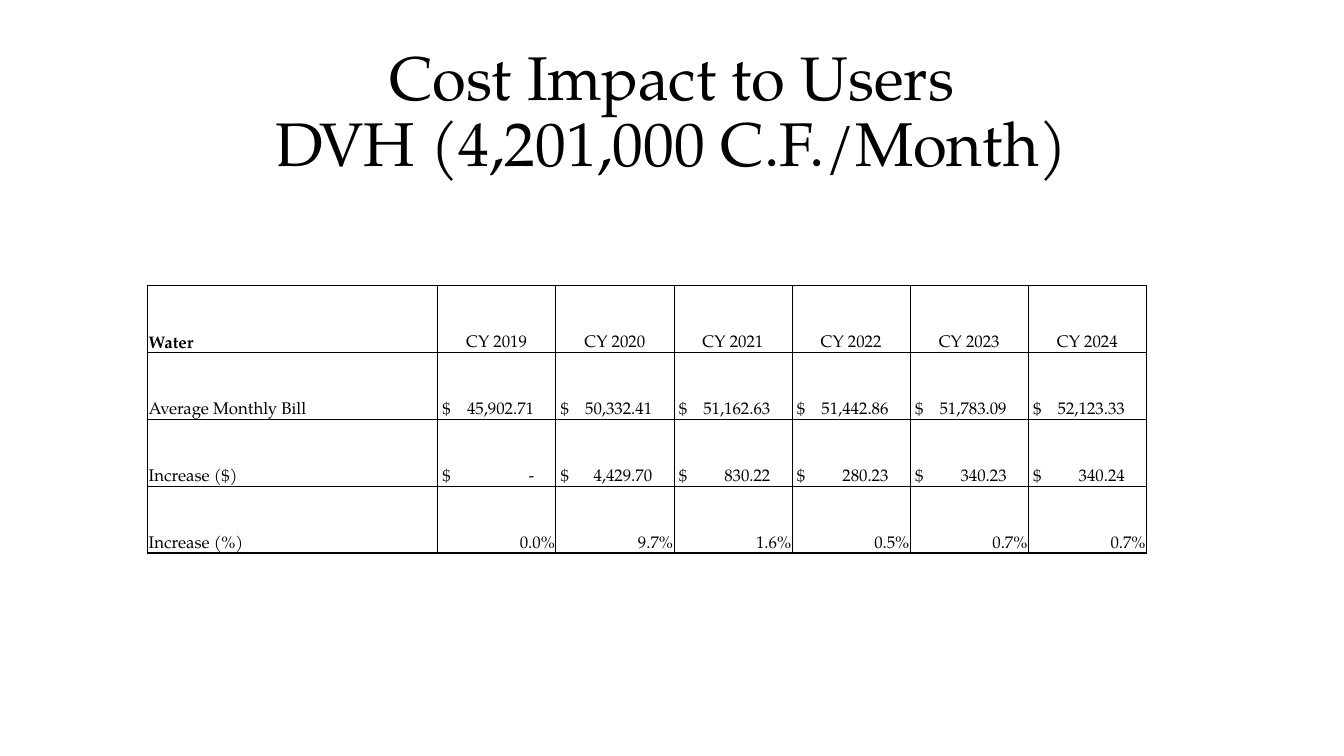
from lxml import etree
from pptx import Presentation
from pptx.dml.color import RGBColor
from pptx.enum.text import MSO_ANCHOR as Anchor, PP_ALIGN as Align
from pptx.oxml.ns import qn
from pptx.util import Pt


def style(paragraph, size, color, bold=False):
    for run in paragraph.runs:
        run.font.name = "TeX Gyre Pagella"
        run.font.size = Pt(size)
        run.font.bold = bold
        run.font.color.rgb = RGBColor.from_string(color)


def add_border(cell, position, side, width, color):
    line = etree.Element(qn(f"a:ln{side}"), w=str(Pt(width)))
    fill = etree.SubElement(line, qn("a:solidFill"))
    etree.SubElement(fill, qn("a:srgbClr"), val=color)
    cell._tc.get_or_add_tcPr().insert(position, line)


BLACK = "000000"
bills = [
    ["Water", "CY 2019", "CY 2020", "CY 2021", "CY 2022", "CY 2023", "CY 2024"],
    ["Average Monthly Bill", "45,902.71", "50,332.41", "51,162.63",
     "51,442.86", "51,783.09", "52,123.33"],
    ["Increase ($)", "-", "4,429.70", "830.22", "280.23", "340.23", "340.24"],
    ["Increase (%)", "0.0%", "9.7%", "1.6%", "0.5%", "0.7%", "0.7%"],
]
row_aligns = [Align.CENTER, Align.LEFT, Align.LEFT, Align.RIGHT]
dollar_rows = (1, 2)
last_row, last_col = len(bills) - 1, len(bills[0]) - 1
label_width, year_width, row_height = 207, 84.4, 47.75

prs = Presentation()
prs.slide_width, prs.slide_height = Pt(960), Pt(540)
slide = prs.slides.add_slide(prs.slide_layouts[6])

title = slide.shapes.add_textbox(Pt(66), Pt(28.75), Pt(828), Pt(104.4)).text_frame
title.word_wrap = True
title.vertical_anchor = Anchor.MIDDLE
heading = title.paragraphs[0]
heading.text = "Cost Impact to Users\vDVH (4,201,000 C.F./Month)"
heading.alignment = Align.CENTER
heading.line_spacing = 0.9
style(heading, 44, BLACK)

table = slide.shapes.add_table(
    len(bills), len(bills[0]), Pt(105.6), Pt(204),
    Pt(label_width + last_col * year_width), Pt(len(bills) * row_height)).table
table.first_row = table.horz_banding = False
for c, column in enumerate(table.columns):
    column.width = Pt(year_width if c else label_width)
for row in table.rows:
    row.height = Pt(row_height)

for r, values in enumerate(bills):
    for c, value in enumerate(values):
        is_dollar = c > 0 and r in dollar_rows
        cell = table.cell(r, c)
        cell.fill.background()
        cell.vertical_anchor = Anchor.BOTTOM
        cell.margin_left = Pt(3.5 if is_dollar else 0.6)
        cell.margin_right = cell.margin_top = Pt(0.6)
        cell.margin_bottom = Pt(0)

        entry = cell.text_frame.paragraphs[0]
        entry.text = f"$\t{value}" if is_dollar else value
        entry.alignment = row_aligns[r] if c else Align.LEFT
        if is_dollar:
            tabs = etree.SubElement(entry._p.get_or_add_pPr(), qn("a:tabLst"))
            etree.SubElement(tabs, qn("a:tab"), pos=str(Pt(65.5)), algn="r")
        style(entry, 12, BLACK, bold=(r == c == 0))

        heavy_sides = [("L", c == 0), ("R", c == last_col),
                       ("T", r in (0, 1)), ("B", r in (0, last_row))]
        for position, (side, heavy) in enumerate(heavy_sides):
            add_border(cell, position, side, 1 if heavy else 0.5, BLACK)

prs.save("out.pptx")
